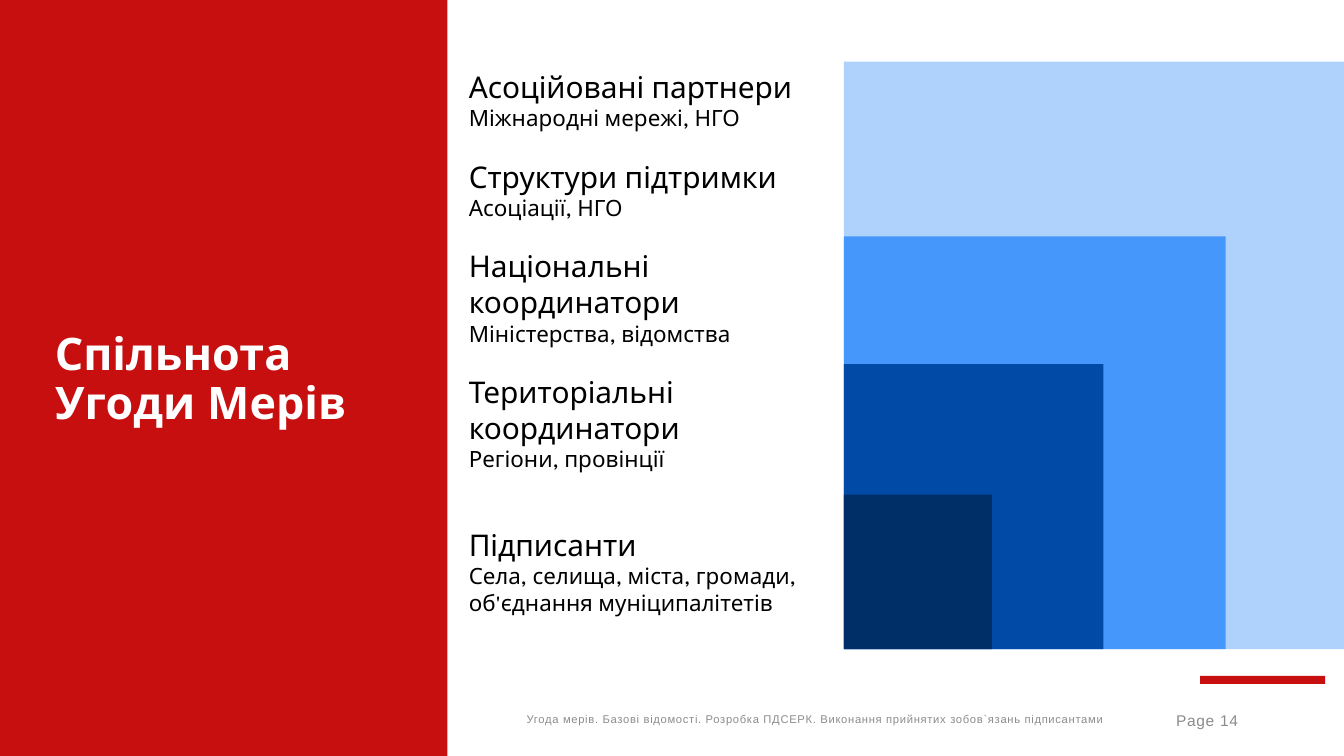
from pptx import Presentation
from pptx.dml.color import RGBColor
from pptx.enum.shapes import MSO_SHAPE
from pptx.enum.text import MSO_ANCHOR, PP_ALIGN
from pptx.util import Inches, Pt

RECTANGLE = MSO_SHAPE.RECTANGLE
TOP, MIDDLE = MSO_ANCHOR.TOP, MSO_ANCHOR.MIDDLE
RIGHT = PP_ALIGN.RIGHT

RED = RGBColor(0xC8, 0x0F, 0x0F)
WHITE = RGBColor(0xFF, 0xFF, 0xFF)
BLACK = RGBColor(0x00, 0x00, 0x00)
GREY = RGBColor(0x8C, 0x8C, 0x8C)
PALE_BLUE = RGBColor(0xAF, 0xD2, 0xFD)
BRIGHT_BLUE = RGBColor(0x46, 0x97, 0xFB)
DEEP_BLUE = RGBColor(0x01, 0x4B, 0xA6)
NAVY = RGBColor(0x00, 0x2F, 0x68)

HEADING_FONT = "League Spartan"
FOOTER_FONT = "Arial"

# Nested levels share their left and bottom edges
LEVELS_LEFT, LEVELS_BOTTOM = 6.28, 4.83
LEVELS = [  # width, top, colour
    (3.73, 0.46, PALE_BLUE),
    (2.84, 1.76, BRIGHT_BLUE),
    (1.93, 2.71, DEEP_BLUE),
    (1.10, 3.68, NAVY),
]

GAP = 14.5
MEMBERS = [  # name, examples, space before in points
    ("Асоційовані партнери", "Міжнародні мережі, НГО", 0),
    ("Структури підтримки", "Асоціації, НГО", GAP),
    ("Національні координатори", "Міністерства, відомства", GAP),
    ("Територіальні координатори", "Регіони, провінції", GAP),
    ("Підписанти", "Села, селища, міста, громади, об'єднання муніципалітетів", 2 * GAP),
]


def add_rectangle(slide, left, top, width, height, color):
    shape = slide.shapes.add_shape(
        RECTANGLE, Inches(left), Inches(top), Inches(width), Inches(height))
    shape.shadow.inherit = False
    shape.fill.solid()
    shape.fill.fore_color.rgb = color
    shape.line.fill.background()


def add_text_frame(slide, left, top, width, height, anchor=MIDDLE):
    box = slide.shapes.add_textbox(
        Inches(left), Inches(top), Inches(width), Inches(height))
    frame = box.text_frame
    frame.word_wrap = True
    frame.vertical_anchor = anchor
    return frame


def add_run(paragraph, text, size, color, font_name=HEADING_FONT):
    run = paragraph.add_run()
    run.text = text
    run.font.size = Pt(size)
    run.font.name = font_name
    run.font.color.rgb = color
    return run


def add_title(slide):
    paragraph = add_text_frame(slide, 0.31, 0.53, 2.78, 4.6).paragraphs[0]
    paragraph.line_spacing = 0.9
    add_run(paragraph, "Спільнота Угоди Мерів", 24, WHITE).font.bold = True


def add_footer(slide, left, width, text, size, letter_spacing):
    paragraph = add_text_frame(slide, left, 5.21, width, 0.3).paragraphs[0]
    paragraph.space_after = Pt(6)
    run = add_run(paragraph, text, size, GREY, FOOTER_FONT)
    run.font._element.set("spc", str(letter_spacing))  # hundredths of a point
    return paragraph


def add_members(slide):
    frame = add_text_frame(slide, 3.39, 0.46, 3.03, 4.21, TOP)
    for index, (name, examples, space_before) in enumerate(MEMBERS):
        paragraph = frame.add_paragraph() if index else frame.paragraphs[0]
        if space_before:
            paragraph.space_before = Pt(space_before)
        add_run(paragraph, name, 16, BLACK)
        add_run(frame.add_paragraph(), examples, 12, BLACK)


def main():
    presentation = Presentation()
    presentation.slide_width = Inches(10)
    presentation.slide_height = Inches(10 * 9 / 16)
    slide = presentation.slides.add_slide(presentation.slide_layouts[6])

    # Red accent and title panel
    add_rectangle(slide, 8.93, 5.03, 0.93, 0.06, RED)
    add_rectangle(slide, -0.01, 0, 3.34, 5.63, RED)
    add_title(slide)

    # Footer
    footer = add_footer(
        slide, 3.82, 4.69,
        "Угода мерів. Базові відомості. Розробка ПДСЕРК. "
        "Виконання прийнятих зобов`язань підписантами", 6, 37)
    footer.line_spacing = 0.9
    add_footer(slide, 8.64, 0.67, "Page 14", 8.3, 40).alignment = RIGHT

    # Community members and their nested levels
    add_members(slide)
    for width, top, color in LEVELS:
        add_rectangle(slide, LEVELS_LEFT, top, width, LEVELS_BOTTOM - top, color)

    presentation.save("out.pptx")


if __name__ == "__main__":
    main()
